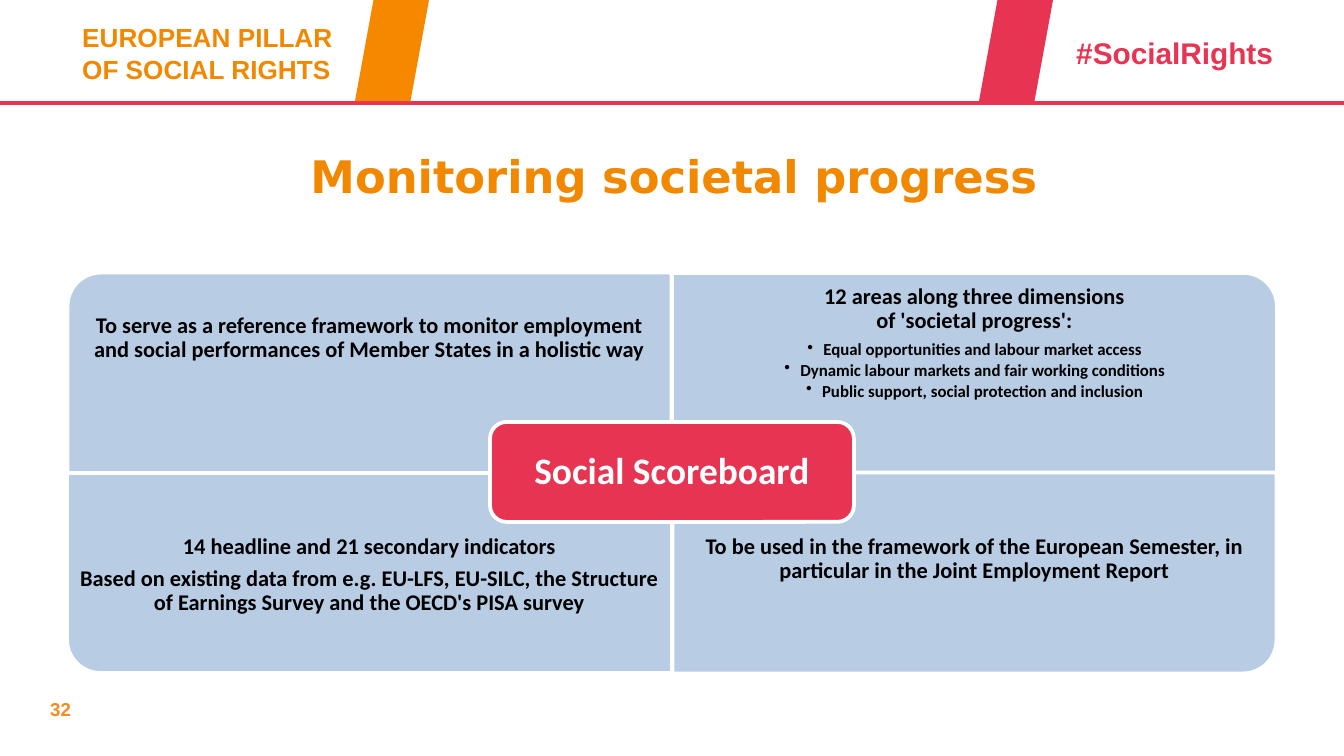
from copy import deepcopy
from dataclasses import dataclass

from lxml import etree
from pptx import Presentation
from pptx import util as u
from pptx.dml.color import RGBColor
from pptx.enum import shapes, text
from pptx.oxml.ns import qn

PX = 914400 / 134.4  # EMU per px
ORANGE, RED, BLUE, WHITE, BLACK = "F18800", "E73452", "B8CCE4", "FFFFFF", "000000"
SHAPE = shapes.MSO_SHAPE


@dataclass(frozen=True)
class Box:
    left: int
    top: int
    width: int
    height: int

    def emu(self) -> list[int]:
        return [px(n) for n in (self.left, self.top, self.width, self.height)]


@dataclass(frozen=True)
class Quadrant:
    column: int
    row: int
    rotation: int
    statements: tuple[str, ...]
    bullets: tuple[str, ...] = ()
    inset_top: int = 12


def px(length: int) -> int:
    return round(length * PX)


def color(hex_code: str) -> RGBColor:
    return RGBColor.from_string(hex_code)


def write(frame, words: str, *, size: int, fill: str, font: str = "Calibri",
          align=text.PP_ALIGN.LEFT, spacing: float = 1.0, after: float = 0,
          bullet: bool = False, first: bool = True) -> None:
    """Add one bold paragraph to a text frame."""
    paragraph = frame.paragraphs[0] if first else frame.add_paragraph()
    paragraph.text = words
    paragraph.alignment = align
    paragraph.line_spacing = spacing
    paragraph.space_before = u.Pt(0)
    paragraph.space_after = u.Pt(after)
    if bullet:
        paragraph.level = 1
        properties = paragraph._p.get_or_add_pPr()
        properties.set("marL", str(px(16)))
        properties.set("indent", str(px(-16)))
        etree.SubElement(properties, qn("a:buChar")).set("char", "•")
    for run in paragraph.runs:
        run.font.size, run.font.bold, run.font.name = u.Pt(size), True, font
        run.font.color.rgb = color(fill)
    # Line breaks carry the same format as the words around them
    for line_break in paragraph._p.findall(qn("a:br")):
        line_break.insert(0, deepcopy(paragraph.runs[0]._r.get_or_add_rPr()))


def add_frame(slide, box: Box):
    frame = slide.shapes.add_textbox(*box.emu()).text_frame
    frame.word_wrap = True
    return frame


def set_insets(frame, inset: int, top: int) -> None:
    frame.margin_left = frame.margin_right = frame.margin_bottom = px(inset)
    frame.margin_top = px(top)


def add_block(slide, kind, box: Box, fill: str, outline: str | None = None):
    block = slide.shapes.add_shape(kind, *box.emu())
    block.shadow.inherit = False
    block.fill.solid()
    block.fill.fore_color.rgb = color(fill)
    if outline:
        block.line.color.rgb = color(outline)
        block.line.width = u.Pt(2)
    else:
        block.line.fill.background()
    return block


def add_quadrant(slide, quadrant: Quadrant) -> None:
    width, height, text_height = 605, 200, 150
    left, top = 67 + quadrant.column * width, 273 + quadrant.row * height
    # A quarter turn swaps the sides around the same centre
    swap = (width - height) // 2 if quadrant.rotation % 180 else 0
    tile = Box(left + swap, top - swap, width - 2 * swap, height + 2 * swap)
    block = add_block(slide, SHAPE.ROUND_1_RECTANGLE, tile, BLUE, WHITE)
    block.rotation = quadrant.rotation

    text_top = top + quadrant.row * (height - text_height)
    frame = add_frame(slide, Box(left, text_top, width, text_height))
    set_insets(frame, 12, quadrant.inset_top)
    shared = dict(fill=BLACK, align=text.PP_ALIGN.CENTER, spacing=0.9)
    for index, statement in enumerate(quadrant.statements):
        write(frame, statement, size=12, after=4.2, first=index == 0, **shared)
    for bullet in quadrant.bullets:
        write(frame, bullet, size=9, after=1.35, bullet=True, first=False, **shared)


QUADRANTS = (
    Quadrant(0, 0, 270, (
        "To serve as a reference framework to monitor employment and social "
        "performances of Member States in a holistic way",), inset_top=46),
    Quadrant(1, 0, 0, ("12 areas along three dimensions\nof 'societal progress':",), (
        "Equal opportunities and labour market access",
        "Dynamic labour markets and fair working conditions",
        "Public support, social protection and inclusion")),
    Quadrant(0, 1, 180, (
        "14 headline and 21 secondary indicators",
        "Based on existing data from e.g. EU-LFS, EU-SILC, the Structure of "
        "Earnings Survey and the OECD's PISA survey")),
    Quadrant(1, 1, 90, (
        "To be used in the framework of the European Semester, in particular "
        "in the Joint Employment Report",)),
)


def main() -> None:
    deck = Presentation()
    deck.slide_width, deck.slide_height = px(1344), px(756)
    slide = deck.slides.add_slide(deck.slide_layouts[5])

    # Page number and header band
    write(add_frame(slide, Box(37, 691, 293, 36)), "32",
          size=10, fill="F68B20", font="Arial")
    write(add_frame(slide, Box(69, 15, 341, 77)), "EUROPEAN PILLAR\nOF SOCIAL RIGHTS",
          size=14, fill=ORANGE, font="Arial")
    rule = slide.shapes.add_connector(shapes.MSO_CONNECTOR.STRAIGHT,
                                      0, px(103), px(1344), px(103))
    rule.line.color.rgb = color(RED)
    rule.line.width = u.Pt(2.25)
    etree.SubElement(rule._element.spPr, qn("a:effectLst"))
    write(add_frame(slide, Box(1063, 28, 233, 50)), "#SocialRights",
          size=16, fill=RED, font="Arial")
    for left, fill in ((355, "F68800"), (979, RED)):
        add_block(slide, SHAPE.PARALLELOGRAM, Box(left, 0, 74, 101), fill)

    # Title
    title = slide.shapes.title
    title.left, title.top, title.width, title.height = Box(69, 124, 1210, 103).emu()
    title.text_frame.vertical_anchor = text.MSO_ANCHOR.MIDDLE
    write(title.text_frame, "Monitoring societal progress", size=24, fill=ORANGE,
          font="DejaVu Sans", align=text.PP_ALIGN.CENTER)

    # Four quadrants around the scoreboard
    for quadrant in QUADRANTS:
        add_quadrant(slide, quadrant)
    scoreboard = add_block(slide, SHAPE.ROUNDED_RECTANGLE,
                           Box(490, 422, 364, 100), RED, WHITE)
    frame = scoreboard.text_frame
    frame.word_wrap = True
    frame.vertical_anchor = text.MSO_ANCHOR.MIDDLE
    set_insets(frame, 10, 10)
    write(frame, "Social Scoreboard", size=20, fill=WHITE,
          align=text.PP_ALIGN.CENTER, spacing=0.9)

    deck.save("out.pptx")


if __name__ == "__main__":
    main()
